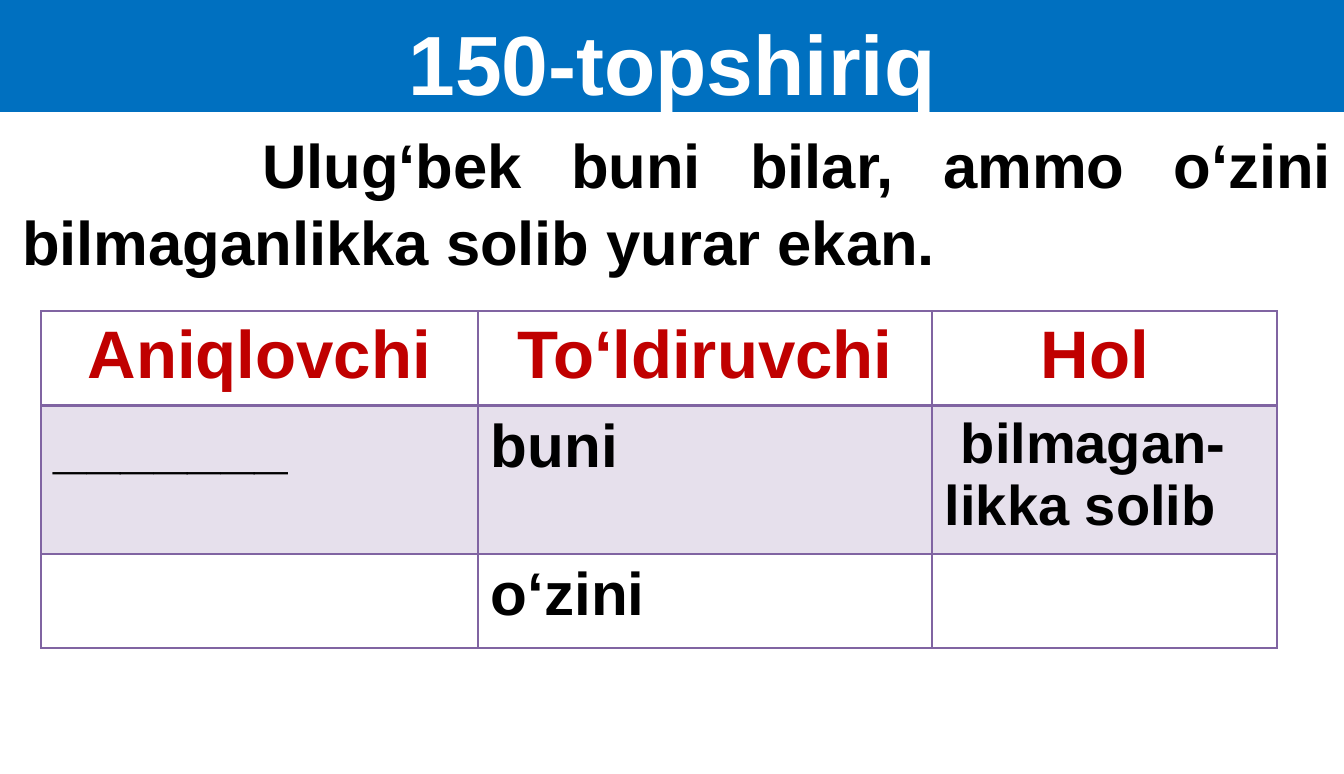
"""Build the sentence-analysis slide for exercise 150."""
from dataclasses import dataclass

from lxml.etree import SubElement
from pptx import Presentation
from pptx.dml.color import RGBColor
from pptx.enum.shapes import MSO_SHAPE as Shape
from pptx.enum.text import MSO_ANCHOR as Anchor, PP_ALIGN as Align
from pptx.oxml.ns import qn
from pptx.util import Emu, Pt

EMU_PER_PX = 9071
WHITE, BLACK, BLUE, RED = "FFFFFF", "000000", "0070C0", "C00000"
VIOLET, LILAC = "8064A2", "E6E0EC"
COLUMN_WIDTHS = (437, 454, 345)
ROW_HEIGHTS = (94, 148, 94)


@dataclass(frozen=True)
class Words:
    """Text with its size, colour, alignment and first-line indent."""
    text: str
    size: int
    color: str = BLACK
    align: Align = Align.LEFT
    indent: int = 0
    spacing: float = 1.0


@dataclass(frozen=True)
class Entry:
    """A filled-in table cell."""
    row: int
    column: int
    words: Words
    right_inset: int = 13


TITLE = Words("150-topshiriq", 60, WHITE, Align.CENTER)
SENTENCE = Words("Ulug‘bek buni bilar, ammo o‘zini bilmaganlikka solib yurar ekan.",
                 44, align=Align.JUSTIFY, indent=240, spacing=1.05)
ENTRIES = (
    Entry(0, 0, Words("Aniqlovchi", 48, RED, Align.CENTER)),
    Entry(0, 1, Words("To‘ldiruvchi", 48, RED, Align.CENTER)),
    Entry(0, 2, Words("Hol", 48, RED, Align.CENTER), right_inset=32),
    Entry(1, 0, Words("_______", 43)),
    Entry(1, 1, Words("buni", 43)),
    Entry(1, 2, Words("bilmagan-likka solib", 40, indent=16)),
    Entry(2, 1, Words("o‘zini", 43)),
)


def px(length: int) -> Emu:
    """Turn pixels into EMU."""
    return Emu(length * EMU_PER_PX)


def rgb(color: str) -> RGBColor:
    """Turn a hex string into a colour."""
    return RGBColor.from_string(color)


def write(frame, words: Words) -> None:
    """Write bold Arial words into a text frame."""
    frame.word_wrap = True
    para = frame.paragraphs[0]
    para.text = words.text
    para.alignment = words.align
    para.line_spacing = words.spacing
    font = para.font
    font.name, font.size, font.bold = "Arial", Pt(words.size), True
    font.color.rgb = rgb(words.color)
    if words.indent:
        properties = para._p.get_or_add_pPr()
        properties.set("marL", "0")
        properties.set("indent", str(px(words.indent)))


def set_insets(target, left: int, top: int, right: int, bottom: int) -> None:
    """Set the inner margins of a text frame or cell."""
    target.margin_left, target.margin_top = px(left), px(top)
    target.margin_right, target.margin_bottom = px(right), px(bottom)


def add_title(page) -> None:
    """Draw the blue title band."""
    band = page.shapes.add_shape(Shape.RECTANGLE, 0, 0, px(1344), px(112))
    band.shadow.inherit = False
    band.fill.solid()
    band.fill.fore_color.rgb = rgb(BLUE)
    band.line.fill.background()
    write(band.text_frame, TITLE)
    band.text_frame.vertical_anchor = Anchor.MIDDLE
    set_insets(band.text_frame, 13, 12, 13, 0)


def add_sentence(page) -> None:
    """Place the sentence to analyse."""
    box = page.shapes.add_textbox(px(14), px(112), px(1327), px(159))
    write(box.text_frame, SENTENCE)
    set_insets(box.text_frame, 8, 11, 8, 7)


def add_borders(cell, top: int, bottom: int) -> None:
    """Outline a cell, with its top and bottom widths in points."""
    properties = cell._tc.get_or_add_tcPr()
    for side, width in (("L", 1), ("R", 1), ("T", top), ("B", bottom)):
        line = SubElement(properties, qn(f"a:ln{side}"), w=str(Pt(width)))
        fill = SubElement(line, qn("a:solidFill"))
        SubElement(fill, qn("a:srgbClr"), val=VIOLET)


def add_parts_table(page) -> None:
    """Draw the table of sentence parts."""
    table = page.shapes.add_table(
        len(ROW_HEIGHTS), len(COLUMN_WIDTHS), px(41), px(311),
        px(sum(COLUMN_WIDTHS)), px(sum(ROW_HEIGHTS))).table
    for column, width in zip(table.columns, COLUMN_WIDTHS):
        column.width = px(width)
    for index, (row, height) in enumerate(zip(table.rows, ROW_HEIGHTS)):
        row.height = px(height)
        for cell in row.cells:
            add_borders(cell, 2 if index == 1 else 1, 2 if index == 0 else 1)
            cell.fill.solid()
            cell.fill.fore_color.rgb = rgb(LILAC if index == 1 else WHITE)
    for entry in ENTRIES:
        cell = table.cell(entry.row, entry.column)
        set_insets(cell, 13, 7, entry.right_inset, 7)
        write(cell.text_frame, entry.words)


def main() -> None:
    """Build and save the deck."""
    deck = Presentation()
    deck.slide_width, deck.slide_height = px(1344), px(774)
    page = deck.slides.add_slide(deck.slide_layouts[6])
    add_title(page)
    add_sentence(page)
    add_parts_table(page)
    deck.save("out.pptx")


if __name__ == "__main__":
    main()
